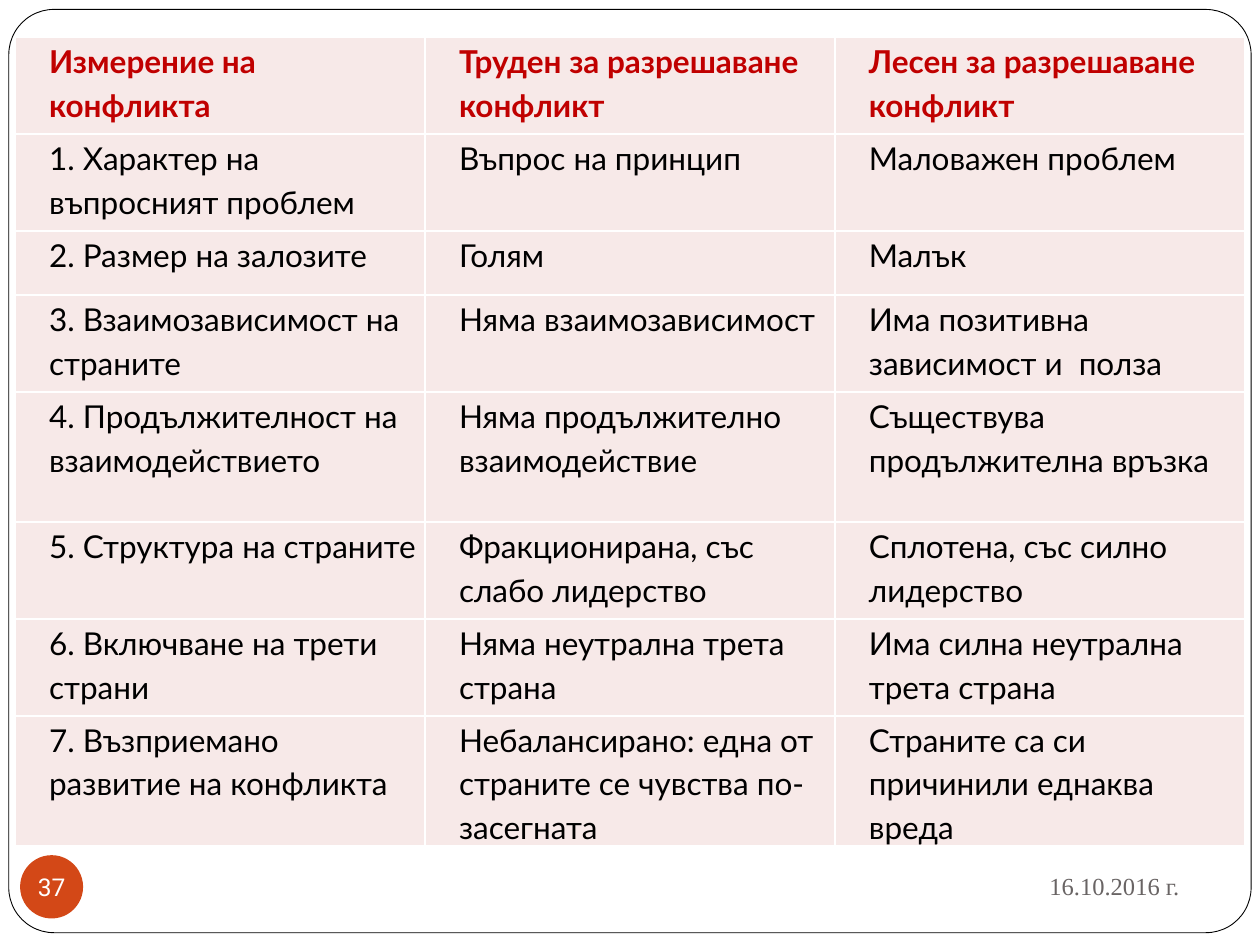
"""Build a slide comparing conflicts that are hard and easy to resolve."""
from dataclasses import dataclass

import pptx
import pptx.dml.color
import pptx.enum.shapes
import pptx.enum.text
import pptx.oxml
import pptx.oxml.ns
import pptx.util

RGBColor = pptx.dml.color.RGBColor
Shapes = pptx.enum.shapes.MSO_SHAPE
Align = pptx.enum.text.PP_ALIGN
Anchor = pptx.enum.text.MSO_ANCHOR
Pt = pptx.util.Pt

WHITE = RGBColor(0xFF, 0xFF, 0xFF)
BLACK = RGBColor(0x00, 0x00, 0x00)
RED = RGBColor(0xC0, 0x00, 0x00)
PINK = RGBColor(0xF7, 0xE9, 0xE8)
ORANGE = RGBColor(0xD3, 0x48, 0x17)
GREY = RGBColor(0x69, 0x64, 0x64)

SLIDE_W = pptx.util.Inches(10)
SLIDE_H = pptx.util.Inches(7.5)
LINE_H = 0.26
CELL_PARAGRAPH = {"alignment": Align.LEFT, "line_spacing": 1.15,
                  "space_before": Pt(2), "space_after": Pt(2)}
CELL_MARGINS = {"margin_left": pptx.util.Inches(0.07), "margin_right": pptx.util.Inches(0.07),
                "margin_top": 0, "margin_bottom": 0}


@dataclass(frozen=True)
class Box:
    """Hold a rectangle as shares of the slide's width and height."""
    left: float
    top: float
    width: float
    height: float

    def emu(self) -> list[int]:
        """Return left, top, width and height in EMU."""
        return [round(self.left * SLIDE_W), round(self.top * SLIDE_H),
                round(self.width * SLIDE_W), round(self.height * SLIDE_H)]


@dataclass(frozen=True)
class TextStyle:
    """Describe the font of a run."""
    name: str
    size: int
    color: RGBColor
    bold: bool = False


@dataclass(frozen=True)
class Row:
    """Hold one table row and its height in text lines."""
    lines: int
    texts: tuple[str, str, str]


HEADER = TextStyle("Lato", 18, RED, True)
BODY = TextStyle("Lato", 18, BLACK)
DATE = TextStyle("Times New Roman", 14, GREY)
NUMBER = TextStyle("Roboto", 14, WHITE)

ROWS = (
    Row(2, ("Измерение на конфликта", "Труден за разрешаване конфликт",
            "Лесен за разрешаване конфликт")),
    Row(2, ("1. Характер на въпросният проблем", "Въпрос на принцип", "Маловажен проблем")),
    Row(1, ("2. Размер на залозите", "Голям", "Малък")),
    Row(2, ("3. Взаимозависимост на страните", "Няма взаимозависимост",
            "Има позитивна зависимост и  полза")),
    Row(3, ("4. Продължителност на взаимодействието", "Няма продължително взаимодействие",
            "Съществува продължителна връзка")),
    Row(2, ("5. Структура на страните", "Фракционирана, със слабо лидерство",
            "Сплотена, със силно лидерство")),
    Row(2, ("6. Включване на трети страни", "Няма неутрална трета страна",
            "Има силна неутрална трета страна")),
    Row(3, ("7. Възприемано развитие на конфликта",
            "Небалансирано: една от страните се чувства по-засегната",
            "Страните са си причинили еднаква вреда")),
)


def set_all(target, values: dict) -> None:
    """Set every attribute in values on target."""
    for key, value in values.items():
        setattr(target, key, value)


def write(tf, text: str, style: TextStyle, paragraph: dict):
    """Write one styled paragraph and return it."""
    p = tf.paragraphs[0]
    set_all(p, paragraph)
    r = p.add_run()
    r.text = text
    set_all(r.font, {"name": style.name, "size": Pt(style.size), "bold": style.bold})
    r.font.color.rgb = style.color
    return p


def add_panel(s, kind: int, box: Box, fill: RGBColor):
    """Add a flat filled shape without an outline."""
    sp = s.shapes.add_shape(kind, *box.emu())
    sp.shadow.inherit = False
    sp.fill.solid()
    sp.fill.fore_color.rgb = fill
    sp.line.fill.background()
    return sp


def add_borders(cell, color: RGBColor) -> None:
    """Draw one-point borders on the four sides of a cell."""
    pr = cell._tc.get_or_add_tcPr()
    for i, side in enumerate(("lnL", "lnR", "lnT", "lnB")):
        pr.insert(i, pptx.oxml.parse_xml(
            f'<a:{side} {pptx.oxml.ns.nsdecls("a")} w="{Pt(1)}"><a:solidFill>'
            f'<a:srgbClr val="{color}"/></a:solidFill></a:{side}>'))


def fill_cell(cell, text: str, style: TextStyle) -> None:
    """Fill a table cell with indented text."""
    cell.fill.solid()
    cell.fill.fore_color.rgb = PINK
    set_all(cell, CELL_MARGINS)
    p = write(cell.text_frame, text, style, CELL_PARAGRAPH)
    pr = p._p.get_or_add_pPr()
    pr.set("marL", str(pptx.util.Inches(0.2)))
    pr.set("indent", "0")
    add_borders(cell, WHITE)


def add_comparison(s, box: Box, rows: tuple[Row, ...]) -> None:
    """Add the table with equal columns and heights set by line count."""
    columns = len(rows[0].texts)
    table = s.shapes.add_table(len(rows), columns, *box.emu()).table
    for column in table.columns:
        column.width = round(box.width * SLIDE_W / columns)
    for i, row in enumerate(rows):
        table.rows[i].height = pptx.util.Inches(
            0.51 if row.lines == 1 else row.lines * LINE_H + 0.25)
        for j, text in enumerate(row.texts):
            fill_cell(table.cell(i, j), text, BODY if i else HEADER)


def main() -> None:
    """Build and save the slide."""
    prs = pptx.Presentation()
    set_all(prs, {"slide_width": SLIDE_W, "slide_height": SLIDE_H})
    s = prs.slides.add_slide(prs.slide_layouts[6])

    frame = add_panel(s, Shapes.ROUNDED_RECTANGLE, Box(0.007, 0.01, 0.986, 0.977), WHITE)
    frame.adjustments[0] = 0.049
    frame.line.color.rgb = BLACK
    frame.line.width = Pt(0.5)

    date = s.shapes.add_textbox(*Box(0.675, 0.903, 0.271, 0.069).emu())
    set_all(date.text_frame, {"word_wrap": True, "vertical_anchor": Anchor.MIDDLE})
    write(date.text_frame, "16.10.2016 г.", DATE, {"alignment": Align.RIGHT})

    badge = add_panel(s, Shapes.OVAL, Box(0.016, 0.905, 0.05, 0.067), ORANGE)
    set_all(badge.text_frame, {"word_wrap": False, "vertical_anchor": Anchor.MIDDLE,
                               "margin_left": 0, "margin_right": 0,
                               "margin_top": 0, "margin_bottom": 0})
    write(badge.text_frame, "37", NUMBER, {"alignment": Align.CENTER})

    add_comparison(s, Box(0.012, 0.039, 0.976, 0.861), ROWS)
    prs.save("out.pptx")


if __name__ == "__main__":
    main()
